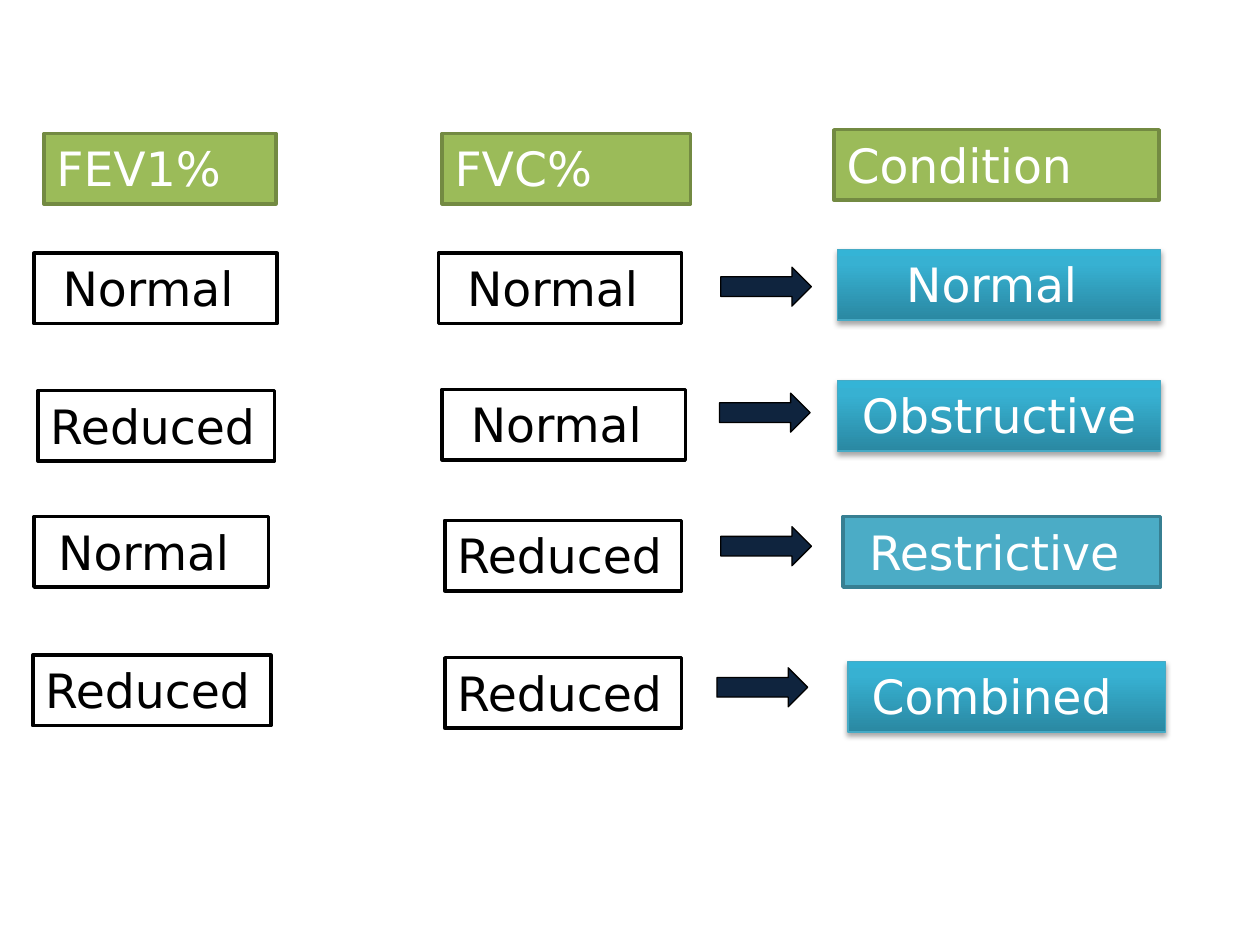
"""Build a slide that reads lung conditions from FEV1% and FVC% results."""
from dataclasses import dataclass

from lxml.etree import SubElement
from pptx import Presentation
from pptx.dml.color import RGBColor
from pptx.enum.shapes import MSO_SHAPE as Preset
from pptx.enum.text import MSO_ANCHOR as Anchor, MSO_AUTO_SIZE as AutoSize, PP_ALIGN as Align
from pptx.oxml import parse_xml
from pptx.oxml.ns import nsdecls, qn
from pptx.shapes.autoshape import Shape
from pptx.slide import Slide
from pptx.util import Inches, Pt

FONT = "DejaVu Sans"
BOX_HEIGHT = 0.56
ARROW_WIDTH, ARROW_HEIGHT = 0.72, 0.31
GRADIENT_STOPS = ((0, "2A88A2"), (80, "37B1D2"), (100, "34B4D6"))


@dataclass(frozen=True)
class Style:
    fill: str
    line: str
    line_width: float
    ink: str = "FFFFFF"
    raised: bool = False


@dataclass(frozen=True)
class Label:
    text: str
    left: float
    top: float
    width: float
    style: Style
    align: Align = Align.CENTER
    right_margin: float = 0.1


@dataclass(frozen=True)
class Arrow:
    left: float
    top: float


HEADING = Style("9BBB59", "738A42", 2)
RESULT = Style("FFFFFF", "000000", 2, ink="000000")
CONDITION = Style("37B1D2", "46AAC5", 0.75, raised=True)
FLAT_CONDITION = Style("4BACC6", "377F92", 2)
ARROW = Style("0F243E", "000000", 0.75)

LABELS = (
    Label("FEV1%", 0.35, 1.06, 1.84, HEADING, Align.LEFT),
    Label("FVC%", 3.51, 1.06, 1.97, HEADING, Align.LEFT),
    Label("Condition", 6.62, 1.03, 2.58, HEADING, Align.LEFT),
    Label("Normal ", 0.27, 2.01, 1.93, RESULT),
    Label("Normal ", 3.48, 2.01, 1.93, RESULT),
    Label("Normal ", 6.65, 1.98, 2.56, CONDITION),
    Label("Reduced ", 0.3, 3.1, 1.88, RESULT, Align.LEFT),
    Label("Normal ", 3.51, 3.09, 1.93, RESULT),
    Label("Obstructive", 6.65, 3.02, 2.56, CONDITION),
    Label("Normal ", 0.27, 4.1, 1.86, RESULT),
    Label("Reduced ", 3.53, 4.13, 1.88, RESULT, Align.LEFT),
    Label("Restrictive ", 6.69, 4.1, 2.52, FLAT_CONDITION),
    Label("Reduced", 0.26, 5.2, 1.89, RESULT, Align.LEFT),
    Label("Reduced", 3.53, 5.22, 1.88, RESULT, Align.LEFT),
    Label("Combined ", 6.73, 5.25, 2.52, CONDITION, right_margin=0.22),
)
ARROWS = (Arrow(5.72, 2.12), Arrow(5.71, 3.12), Arrow(5.72, 4.18), Arrow(5.69, 5.3))


def color(value: str) -> RGBColor:
    return RGBColor.from_string(value)


def raise_surface(shape: Shape) -> None:
    stops = "".join(
        f'<a:gs pos="{position * 1000}"><a:srgbClr val="{value}"/></a:gs>'
        for position, value in GRADIENT_STOPS
    )
    gradient = parse_xml(
        f'<a:gradFill {nsdecls("a")} rotWithShape="1"><a:gsLst>{stops}</a:gsLst>'
        '<a:lin ang="16200000" scaled="0"/></a:gradFill>'
    )
    properties = shape.element.spPr
    properties.replace(properties.find(qn("a:solidFill")), gradient)
    shadow = SubElement(
        properties.find(qn("a:effectLst")), qn("a:outerShdw"),
        blurRad=str(Pt(3.1)), dist=str(Pt(1.8)), dir="5400000", rotWithShape="0",
    )
    tint = SubElement(shadow, qn("a:srgbClr"), val="000000")
    SubElement(tint, qn("a:alpha"), val="35000")


def add_block(page: Slide, preset: Preset, left: float, top: float,
              width: float, height: float, style: Style) -> Shape:
    shape = page.shapes.add_shape(
        preset, Inches(left), Inches(top), Inches(width), Inches(height))
    shape.shadow.inherit = False
    shape.fill.solid()
    shape.fill.fore_color.rgb = color(style.fill)
    shape.line.color.rgb = color(style.line)
    shape.line.width = Pt(style.line_width)
    if style.raised:
        raise_surface(shape)
    return shape


def add_label(page: Slide, label: Label) -> None:
    box = add_block(page, Preset.RECTANGLE, label.left, label.top,
                    label.width, BOX_HEIGHT, label.style)
    frame = box.text_frame
    frame.text = label.text
    frame.word_wrap = True
    frame.auto_size = AutoSize.SHAPE_TO_FIT_TEXT
    frame.vertical_anchor = Anchor.TOP
    frame.margin_right = Inches(label.right_margin)
    para = frame.paragraphs[0]
    para.alignment = label.align
    for span in para.runs:
        span.font.name = FONT
        span.font.size = Pt(27)
        span.font.color.rgb = color(label.style.ink)


def main() -> None:
    deck = Presentation()
    deck.slide_width, deck.slide_height = Inches(10), Inches(7.5)
    page = deck.slides.add_slide(deck.slide_layouts[6])
    for label in LABELS:
        add_label(page, label)
    for arrow in ARROWS:
        add_block(page, Preset.RIGHT_ARROW, arrow.left, arrow.top,
                  ARROW_WIDTH, ARROW_HEIGHT, ARROW)
    deck.save("out.pptx")


if __name__ == "__main__":
    main()
